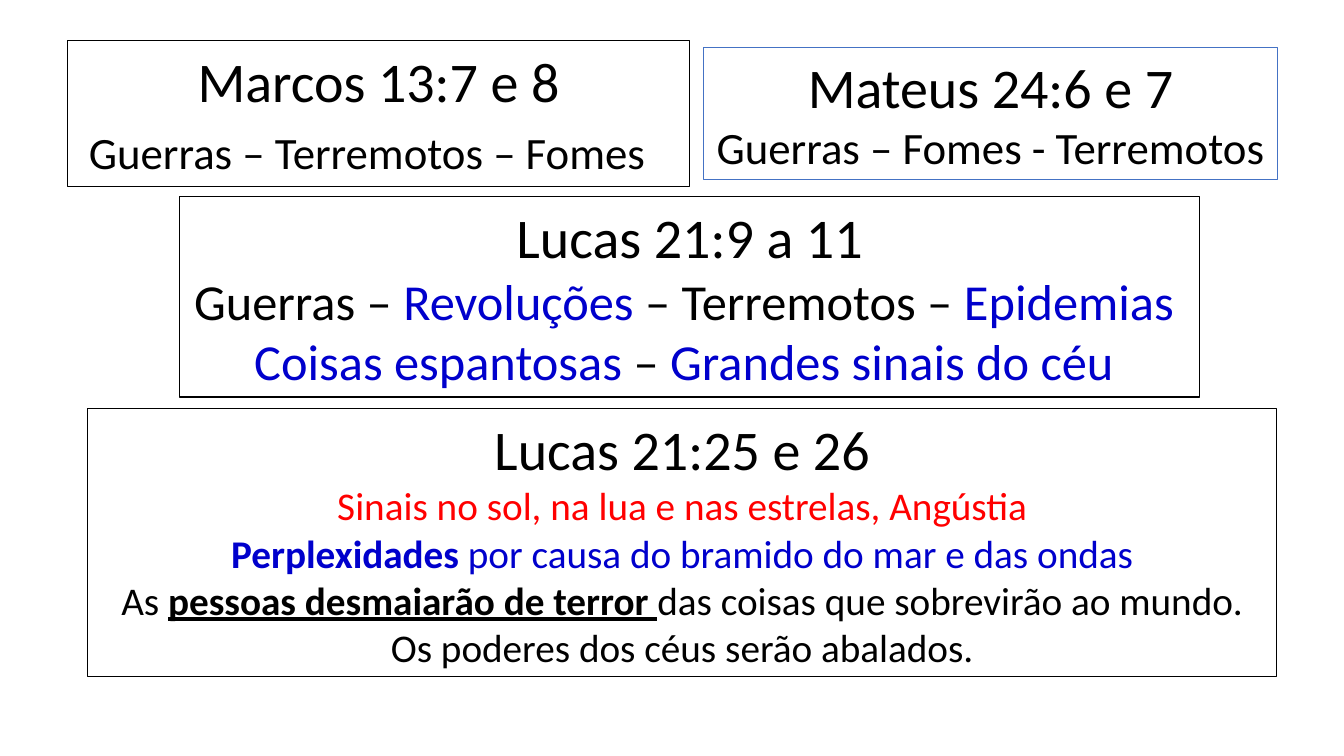
from dataclasses import dataclass

from pptx import Presentation
from pptx.dml.color import RGBColor
from pptx.enum.shapes import MSO_SHAPE
from pptx.enum.text import MSO_ANCHOR, MSO_AUTO_SIZE, PP_ALIGN
from pptx.slide import Slide
from pptx.util import Inches, Pt

BLACK = RGBColor(0x00, 0x00, 0x00)
WHITE = RGBColor(0xFF, 0xFF, 0xFF)
BLUE = RGBColor(0x00, 0x00, 0xCC)
RED = RGBColor(0xFF, 0x00, 0x00)
BORDER_BLUE = RGBColor(0x44, 0x72, 0xC4)

FONT = "Calibri"
REFERENCE_SIZE = 40


@dataclass(frozen=True)
class Phrase:
    text: str
    size: int
    color: RGBColor = BLACK
    bold: bool = False
    underline: bool = False


@dataclass(frozen=True)
class Passage:
    left: float
    top: float
    width: float
    height: float
    reference: str
    signs: list[list[Phrase]]
    border: RGBColor = BLACK
    wrap: bool = False


PASSAGES = [
    Passage(6.98, 0.47, 5.69, 1.31, "Mateus 24:6 e 7", [
        [Phrase("Guerras – Fomes - Terremotos", 32)],
    ], border=BORDER_BLUE),
    Passage(1.78, 1.95, 10.12, 1.99, "Lucas 21:9 a 11", [
        [Phrase("Guerras – ", 36), Phrase("Revoluções", 36, BLUE),
         Phrase(" – Terremotos – ", 36), Phrase("Epidemias ", 36, BLUE)],
        [Phrase("Coisas espantosas ", 36, BLUE), Phrase("– ", 36),
         Phrase("Grandes sinais do céu ", 36, BLUE)],
    ]),
    Passage(0.87, 4.05, 11.79, 2.66, "Lucas 21:25 e 26", [
        [Phrase("Sinais no sol, na lua e nas estrelas, Angústia", 28, RED)],
        [Phrase("Perplexidades", 28, BLUE, bold=True),
         Phrase(" por causa do bramido do mar e das ondas", 28, BLUE)],
        [Phrase("As ", 28),
         Phrase("pessoas desmaiarão de terror ", 28, bold=True, underline=True),
         Phrase("das coisas que sobrevirão ao mundo.", 28)],
        [Phrase("Os poderes dos céus serão abalados.", 28)],
    ], wrap=True),
    Passage(0.67, 0.4, 6.17, 1.45, "Marcos 13:7 e 8", [
        [Phrase("Guerras – Terremotos – Fomes ", 32), Phrase(" ", 40)],
    ]),
]


def draw_passage(slide: Slide, passage: Passage) -> None:
    box = slide.shapes.add_shape(
        MSO_SHAPE.RECTANGLE, Inches(passage.left), Inches(passage.top),
        Inches(passage.width), Inches(passage.height))
    box.shadow.inherit = False
    box.fill.solid()
    box.fill.fore_color.rgb = WHITE
    box.line.color.rgb = passage.border
    box.line.width = Pt(1)

    frame = box.text_frame
    frame.word_wrap = passage.wrap
    frame.auto_size = MSO_AUTO_SIZE.SHAPE_TO_FIT_TEXT
    frame.vertical_anchor = MSO_ANCHOR.MIDDLE
    lines = [[Phrase(passage.reference, REFERENCE_SIZE)], *passage.signs]
    for index, phrases in enumerate(lines):
        paragraph = frame.add_paragraph() if index else frame.paragraphs[0]
        paragraph.alignment = PP_ALIGN.CENTER
        for phrase in phrases:
            run = paragraph.add_run()
            run.text = phrase.text
            run.font.name = FONT
            run.font.size = Pt(phrase.size)
            run.font.color.rgb = phrase.color
            run.font.bold = phrase.bold
            run.font.underline = phrase.underline


def main() -> None:
    presentation = Presentation()
    presentation.slide_width = Inches(13.33)
    presentation.slide_height = Inches(7.5)
    slide = presentation.slides.add_slide(presentation.slide_layouts[6])
    for passage in PASSAGES:
        draw_passage(slide, passage)
    presentation.save("out.pptx")


if __name__ == "__main__":
    main()
